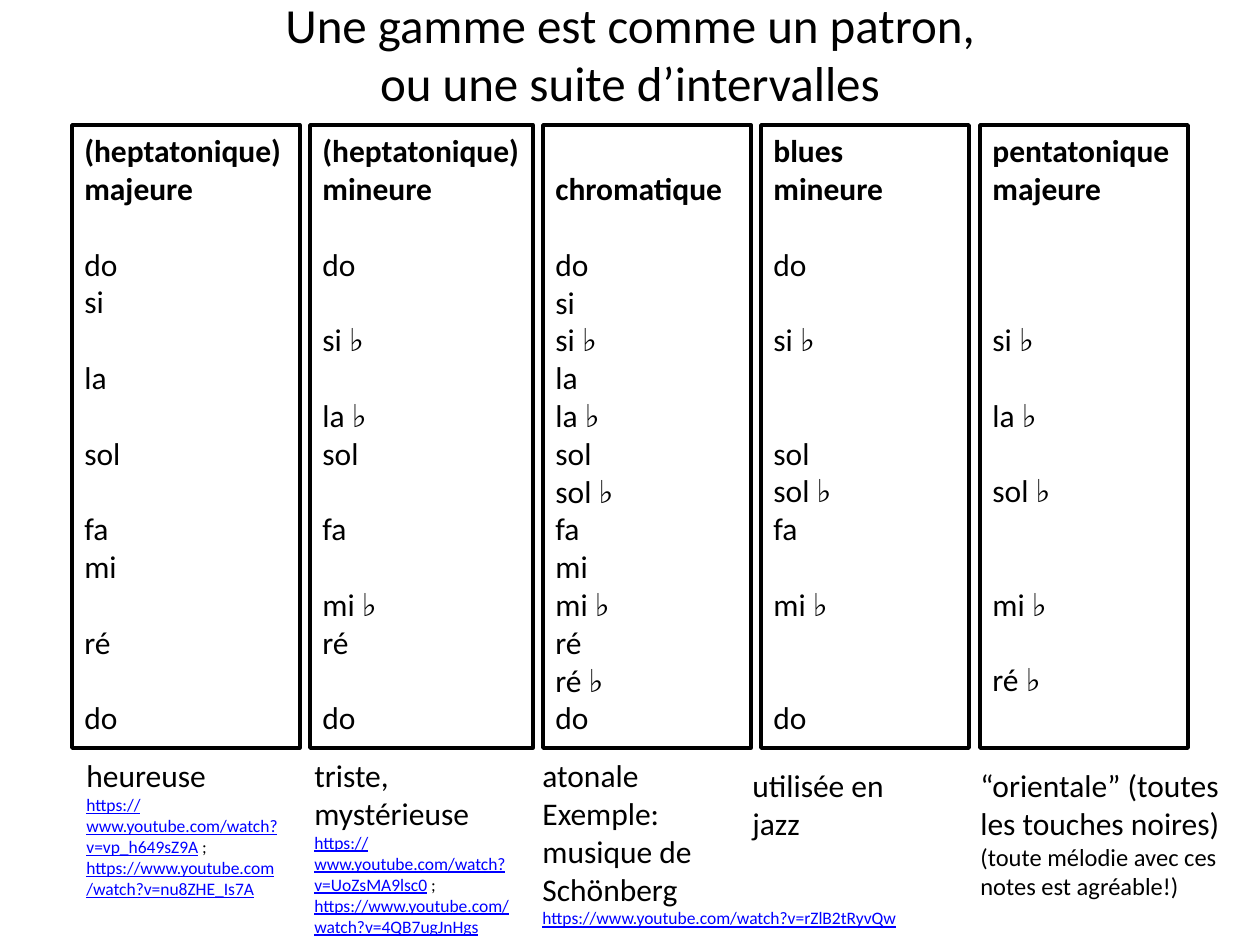
from pptx import Presentation
from pptx.dml.color import RGBColor
from pptx.enum.shapes import MSO_SHAPE as Shape
from pptx.enum.text import MSO_ANCHOR as Anchor, MSO_AUTO_SIZE as Fit, PP_ALIGN as Align
from pptx.util import Emu, Pt

BLACK = RGBColor(0, 0, 0)
BLUE = RGBColor(0, 0, 255)
FONT = "Calibri"
PITCH = 21.6  # height of one text row, in points
INSET = 3.6  # top inset of a box, in points
TOP, HIGH = 125, 623

# One row per semitone, from the high do down to the low do
NOTES = ["do", "si", "si ♭", "la", "la ♭", "sol", "sol ♭",
         "fa", "mi", "mi ♭", "ré", "ré ♭", "do"]

# Left, width, heading lines, rows of the notes in the scale
SCALES = [
    (72, 228, ["(heptatonique)", "majeure"], [0, 1, 3, 5, 7, 8, 10, 12]),
    (310, 223, ["(heptatonique)", "mineure"], [0, 2, 4, 5, 7, 9, 10, 12]),
    (543, 208, ["chromatique"], range(13)),
    (761, 208, ["blues", "mineure"], [0, 2, 5, 6, 7, 9, 12]),
    (980, 208, ["pentatonique", "majeure"], [2, 4, 6, 9, 11]),
]

# Box, then lines as (text, size); \v breaks a long address
SITE = "https://www.youtube.com"
CAPTIONS = [
    ((74, 750, 218, 136), [("heureuse", 18),
                           (SITE + "/watch?v=vp_h649sZ9A ;", 10),
                           (SITE + "\v/watch?v=nu8ZHE_Is7A", 10)]),
    ((302, 750, 228, 174), [("triste,", 18), ("mystérieuse", 18),
                            (SITE + "/watch?v=UoZsMA9lsc0 ;", 10),
                            (SITE + "/\vwatch?v=4QB7ugJnHgs", 10)]),
    ((530, 750, 407, 186), [("atonale", 18), ("Exemple:", 18),
                            ("musique de", 18), ("Schönberg", 18),
                            (SITE + "/watch?v=rZlB2tRyvQw", 10)]),
    ((740, 760, 179, 89), [("utilisée en jazz", 18)]),
    ((968, 760, 292, 149), [
        ("“orientale” (toutes les touches noires)", 18),
        ("(toute mélodie avec ces notes est agréable!)", 14)]),
]


def px(num):
    return Emu(round(num * 914400 / 126))


def place(box):
    return [px(num) for num in box]


def style(font, size, color=BLACK, bold=False):
    font.name, font.size, font.bold = FONT, Pt(size), bold
    font.color.rgb = color


def next_para(frame, index):
    return frame.add_paragraph() if index else frame.paragraphs[0]


def add_title(slide):
    title = slide.shapes.title
    title.left, title.top, title.width, title.height = place((63, 0, 1134, 106))
    frame = title.text_frame
    frame.auto_size = Fit.NONE
    frame.vertical_anchor = Anchor.MIDDLE
    para = frame.paragraphs[0]
    para.text = "Une gamme est comme un patron,\vou une suite d’intervalles"
    para.alignment = Align.CENTER
    style(para.font, 28)


def add_scale(slide, left, width, heads, rows):
    box = slide.shapes.add_shape(Shape.RECTANGLE, *place((left, TOP, width, HIGH)))
    box.shadow.inherit = False
    box.fill.background()
    box.line.color.rgb = BLACK
    box.line.width = Pt(2)
    frame = box.text_frame
    frame.word_wrap = True
    frame.vertical_anchor = Anchor.TOP
    frame.margin_right = 0
    # Headings end on the second row, notes start on the fourth
    start = 2 - len(heads)
    frame.margin_top = Pt(INSET + PITCH * start)
    lines = [(text, row, True) for row, text in enumerate(heads, start)]
    lines += [(NOTES[row], row + 3, False) for row in rows]
    last = start - 1
    for index, (text, row, bold) in enumerate(lines):
        para = next_para(frame, index)
        para.text = text
        para.alignment = Align.LEFT
        para.space_before = Pt(PITCH * (row - last - 1))
        style(para.font, 18, bold=bold)
        last = row


def add_link(para, address, size):
    for index, part in enumerate(address.split("\v")):
        if index:
            para.add_line_break()
        run = para.add_run()
        run.text = part
        style(run.font, size, BLUE)
        run.font.underline = True


def add_caption(slide, box, lines):
    frame = slide.shapes.add_textbox(*place(box)).text_frame
    frame.word_wrap = True
    for index, (text, size) in enumerate(lines):
        para = next_para(frame, index)
        style(para.font, size)
        if text.startswith(SITE):
            address, mark, _ = text.partition(" ;")
            add_link(para, address, size)
            if mark:
                para.add_run().text = mark
        else:
            para.add_run().text = text


def main():
    deck = Presentation()
    deck.slide_width, deck.slide_height = px(1260), px(945)
    slide = deck.slides.add_slide(deck.slide_layouts[5])
    add_title(slide)
    for scale in SCALES:
        add_scale(slide, *scale)
    for caption in CAPTIONS:
        add_caption(slide, *caption)
    deck.save("out.pptx")


if __name__ == "__main__":
    main()
